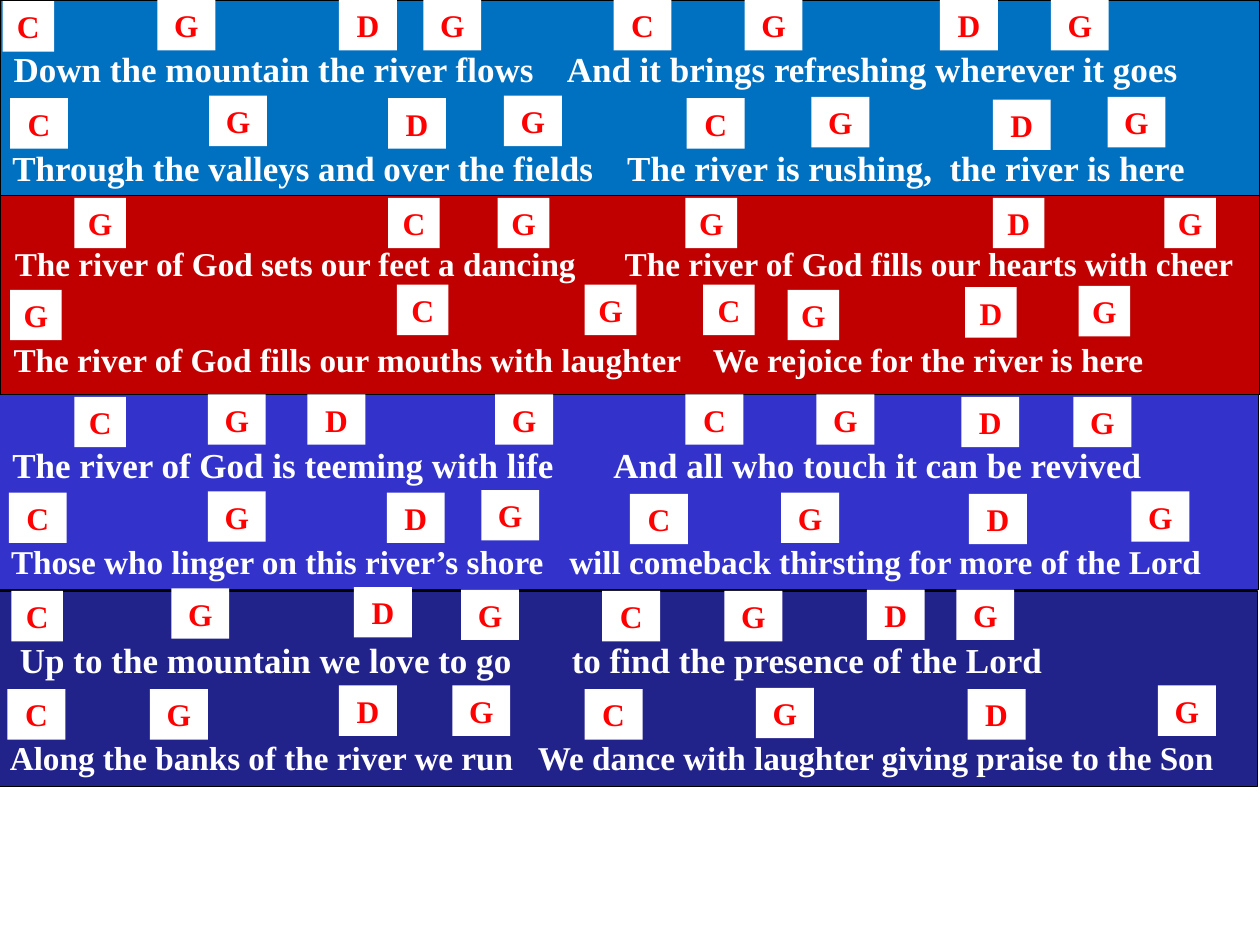
from pptx import Presentation
from pptx.dml.color import RGBColor
from pptx.enum.shapes import MSO_SHAPE
from pptx.enum.text import MSO_ANCHOR, MSO_AUTO_SIZE, PP_ALIGN
from pptx.oxml.ns import qn
from pptx.util import Inches, Pt
from lxml import etree

RECT = MSO_SHAPE.RECTANGLE
MIDDLE, CENTER = MSO_ANCHOR.MIDDLE, PP_ALIGN.CENTER
GROW = MSO_AUTO_SIZE.SHAPE_TO_FIT_TEXT
FONT = "Times New Roman"
WIDTH, HEIGHT = Inches(10), Inches(7.5)
UNIT = WIDTH / 100  # the slide is a grid of 100 columns and 75 rows
PAD = 1  # side inset of a text box
WIDE, SLIM, TALL = 4.6, 4.1, 4
VERSE = "CGDGCGDG"

# Band: left, top, height, fill, lines; all else is relative to the band.
# Line: left, top, size, first half, second half, start of second half,
#       chords, count of slim chords, chord columns, chord rows
BANDS = [
    (0, 0, 15.5, "0070C0", [
        (0.1, 3.3, 20, "Down the mountain the river flows",
         "And it brings refreshing wherever it goes", 45, VERSE, 1,
         [0.2, 12.5, 26.9, 33.6, 48.7, 59.1, 74.6, 83.4],
         [0.1, 0, 0, 0, 0, 0, 0, 0]),
        (0, 11.1, 20, "Through the valleys and over the fields",
         "The river is rushing,  the river is here", 49.8, VERSE, 0,
         [0.8, 16.6, 30.8, 40, 54.5, 64.4, 78.8, 87.9],
         [7.8, 7.6, 7.8, 7.6, 7.8, 7.7, 7.9, 7.7]),
    ]),
    (0, 15.5, 15.8, "C00000", [
        (0.2, 3.3, 19, "The river of God sets our feet a dancing",
         "The river of God fills our hearts with cheer", 49.6, "GCGGDG", 6,
         [5.9, 30.8, 39.5, 54.4, 78.8, 92.4],
         [0.2] * 6),
        (0.1, 10.9, 19, "The river of God fills our mouths with laughter",
         "We rejoice for the river is here", 56.6, "GCGCGDG", 7,
         [0.8, 31.5, 46.4, 55.8, 62.5, 76.6, 85.6],
         [7.5, 7.1, 7.1, 7.1, 7.5, 7.3, 7.2]),
    ]),
    (-0.1, 31.3, 15.5, "3333CC", [
        (0.1, 3.4, 20, "The river of God is teeming with life",
         "And all who touch it can be revived", 48.8, VERSE, 1,
         [6, 16.6, 24.5, 39.4, 54.5, 64.9, 76.4, 85.3],
         [0.2, 0, 0, 0, 0, 0, 0.2, 0.2]),
        (0, 11.2, 19, "Those who linger on this river’s shore",
         "will comeback thirsting for more of the Lord", 45.3, VERSE, 0,
         [0.8, 16.6, 30.8, 38.3, 50.1, 62.1, 77, 89.9],
         [7.8, 7.7, 7.8, 7.6, 7.9, 7.8, 7.9, 7.7]),
    ]),
    (-0.2, 46.9, 15.5, "22228B", [
        (0.8, 3.3, 20, "Up to the mountain we love to go",
         "to find the presence of the Lord", 45.6, VERSE, 1,
         [1.1, 13.8, 28.3, 36.8, 48, 57.7, 69, 76.1],
         [0, -0.2, -0.3, -0.1, 0, 0, -0.1, -0.1]),
        (0, 11.1, 19, "Along the banks of the river we run",
         "We dance with laughter giving praise to the Son", 42.9, VERSE, 0,
         [0.8, 12.1, 27.1, 36.1, 46.6, 60.2, 77, 92.1],
         [7.8, 7.8, 7.5, 7.5, 7.8, 7.7, 7.8, 7.5]),
    ]),
]


def tone(code):
    return RGBColor.from_string(code)


def grid(*cells):
    return [round(cell * UNIT) for cell in cells]


def add_rect(slide, left, top, width, height, fill):
    rect = slide.shapes.add_shape(RECT, *grid(left, top, width, height))
    rect.shadow.inherit = False
    rect.fill.solid()
    rect.fill.fore_color.rgb = tone(fill)
    return rect


def style(para, size, code):
    font = para.runs[0].font
    font.name, font.size, font.bold = FONT, Pt(size), True
    font.color.rgb = tone(code)


def add_chord(slide, left, top, width, name):
    rect = add_rect(slide, left, top, width, TALL, "FFFFFF")
    rect.line.fill.background()
    frame = rect.text_frame
    frame.text = name
    frame.vertical_anchor = MIDDLE
    para = frame.paragraphs[0]
    para.alignment = CENTER
    style(para, 18, "FF0000")


def add_lyric(slide, left, top, size, halves, stop):
    """Place one line of words, its second half set off by a tab stop."""
    tall = 4.4 if size == 20 else 4.2
    box = slide.shapes.add_textbox(*grid(left, top, 100, tall))
    frame = box.text_frame
    frame.word_wrap = True
    frame.auto_size = GROW
    para = frame.paragraphs[0]
    para.text = "\t".join(halves)
    style(para, size, "FFFFFF")
    tabs = etree.SubElement(para._p.get_or_add_pPr(), qn("a:tabLst"))
    pos = grid(stop - PAD)[0]
    etree.SubElement(tabs, qn("a:tab"), pos=str(pos), algn="l")


def add_band(slide, left, top, height, fill, lines):
    band = add_rect(slide, left, top, 100, height, fill)
    band.line.color.rgb = tone("000000")
    band.line.width = Pt(0.75)
    for col, row, size, first, second, start, names, slim, cols, rows in lines:
        add_lyric(slide, left + col, top + row, size,
                  (first, second), start - col)
        for i, (name, x, y) in enumerate(zip(names, cols, rows)):
            width = SLIM if i < slim else WIDE
            add_chord(slide, left + x, top + y, width, name)


def main():
    deck = Presentation()
    deck.slide_width, deck.slide_height = WIDTH, HEIGHT
    slide = deck.slides.add_slide(deck.slide_layouts[6])
    for band in BANDS:
        add_band(slide, *band)
    deck.save("out.pptx")


if __name__ == "__main__":
    main()
